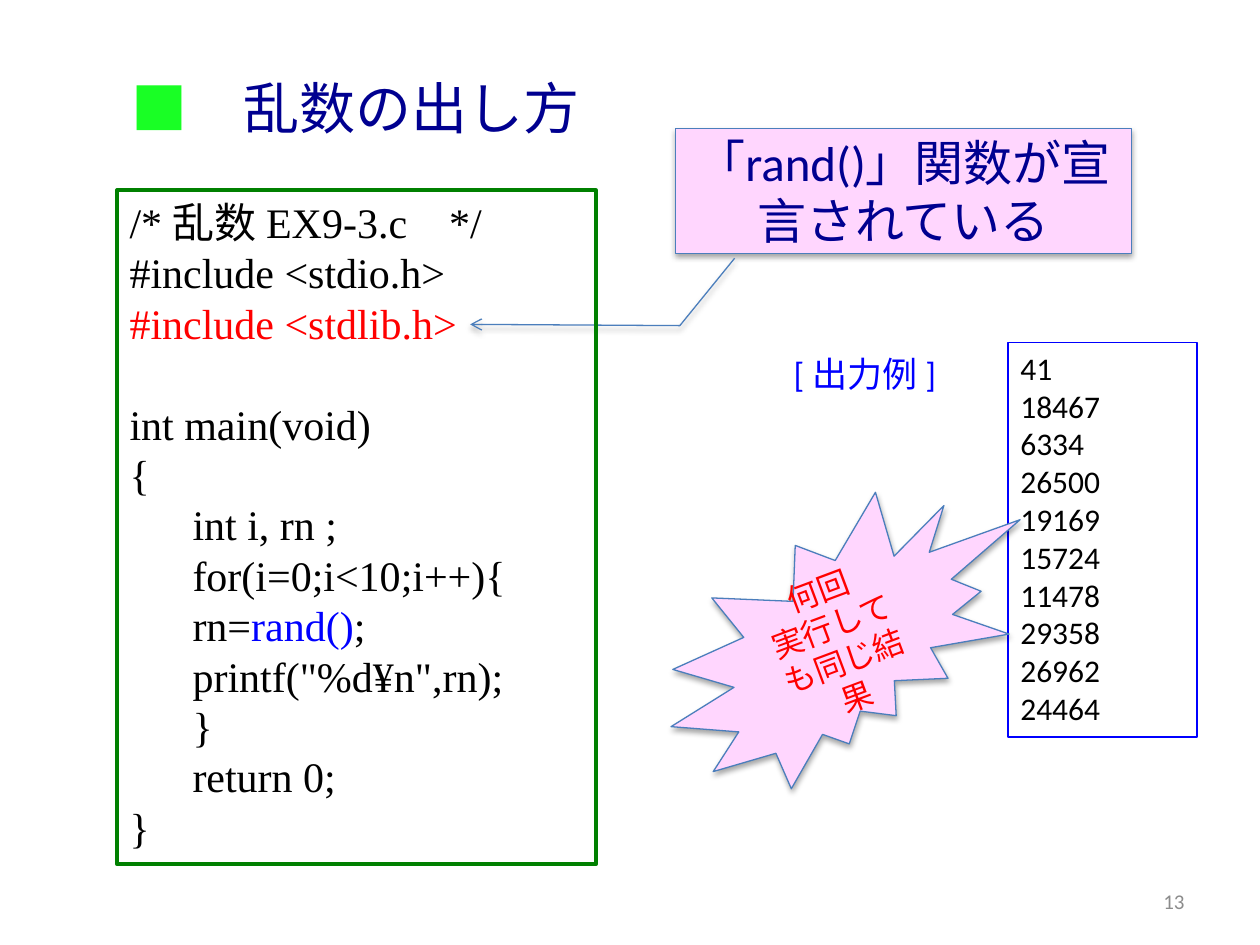
"""Build the slide on generating random numbers in C."""
from dataclasses import dataclass

from lxml import etree
from pptx import Presentation
from pptx.dml.color import RGBColor
from pptx.enum.shapes import MSO_SHAPE as Preset
from pptx.enum.text import MSO_ANCHOR as Anchor, MSO_AUTO_SIZE as AutoSize, PP_ALIGN as Align
from pptx.oxml import parse_xml
from pptx.oxml.ns import nsdecls, qn
from pptx.util import Inches, Pt


@dataclass(frozen=True)
class Theme:
    black: str = "000000"
    red: str = "FF0000"
    blue: str = "0000FF"
    navy: str = "000090"
    green: str = "008000"
    lime: str = "19FF25"
    pink: str = "FFD6FE"
    outline: str = "4B7EBC"
    gray: str = "8C8C8C"
    font: str = "Calibri"
    code_font: str = "Times New Roman"
    title_font: str = "Roboto"
    title_size: int = 32
    callout_size: int = 28
    code_size: int = 24
    label_size: int = 20
    text_size: int = 18
    number_size: int = 12


theme = Theme()


def set_font(font, size, color, name=theme.font):
    font.size = Pt(size)
    font.name = name
    font.color.rgb = RGBColor.from_string(color)


def write_lines(shape, lines, size, color, name=theme.font, align=Align.LEFT, anchor=Anchor.TOP):
    frame = shape.text_frame
    frame.word_wrap = True
    frame.vertical_anchor = anchor
    for index, line in enumerate(lines):
        paragraph = frame.paragraphs[0] if index == 0 else frame.add_paragraph()
        paragraph.alignment = align
        if isinstance(line, str):
            set_font(paragraph.font, size, color, name)
            if line:
                paragraph.add_run().text = line
            continue
        for text, run_color in line:
            run = paragraph.add_run()
            run.text = text
            set_font(run.font, size, run_color, name)


presentation = Presentation()
presentation.slide_width = Inches(10)
presentation.slide_height = Inches(7.5)
slide = presentation.slides.add_slide(presentation.slide_layouts[5])
shapes = slide.shapes

callout = shapes.add_shape(
    Preset.LINE_CALLOUT_2, Inches(5.36), Inches(1.02), Inches(3.62), Inches(0.99))
for index, value in enumerate((1.04, 0.13, 1.58, 0.01, 1.57, -0.45)):
    callout.adjustments[index] = value
write_lines(callout, ["「rand()」関数が宣言されている"], theme.callout_size, theme.navy,
            align=Align.CENTER, anchor=Anchor.MIDDLE)

code_box = shapes.add_shape(
    Preset.RECTANGLE, Inches(0.93), Inches(1.51), Inches(3.8), Inches(5.35))
code_lines = [
    "/* 乱数 EX9-3.c　*/",
    "#include <stdio.h>",
    [("#include <stdlib.h>", theme.red)],
    "",
    "int main(void)",
    "{",
    "\tint i, rn ;",
    "\tfor(i=0;i<10;i++){",
    [("\trn=", theme.black), ("rand()", theme.blue), (";", theme.black)],
    "\tprintf(\"%d¥n\",rn);",
    "\t}",
    "\treturn 0;",
    "}",
]
write_lines(code_box, code_lines, theme.code_size, theme.black, theme.code_font)
for paragraph in code_box.text_frame.paragraphs:
    properties = paragraph._p.get_or_add_pPr()
    tabs = parse_xml(f'<a:tabLst {nsdecls("a")}><a:tab pos="{Inches(0.5)}" algn="l"/></a:tabLst>')
    properties.insert(0, tabs)

output_box = shapes.add_shape(
    Preset.RECTANGLE, Inches(8), Inches(2.72), Inches(1.5), Inches(3.13))
output = "41 18467 6334 26500 19169 15724 11478 29358 26962 24464".split()
write_lines(output_box, output, theme.text_size, theme.black)

for box, color, width in ((code_box, theme.green, 2.25), (output_box, theme.blue, 0.75)):
    box.shadow.inherit = False
    box.fill.background()
    box.line.color.rgb = RGBColor.from_string(color)
    box.line.width = Pt(width)
    box.text_frame.auto_size = AutoSize.SHAPE_TO_FIT_TEXT

output_label = shapes.add_textbox(Inches(6.2), Inches(2.75), Inches(1.36), Inches(0.44))
write_lines(output_label, ["[ 出力例 ]"], theme.label_size, theme.blue)

burst = shapes.add_shape(
    Preset.EXPLOSION2, Inches(5.16), Inches(4.05), Inches(3.17), Inches(1.97))
burst.rotation = 339.5
write_lines(burst, ["何回", "実行しても同じ結果"], theme.text_size, theme.red,
            align=Align.CENTER, anchor=Anchor.MIDDLE)

for note in (callout, burst):
    note.fill.solid()
    note.fill.fore_color.rgb = RGBColor.from_string(theme.pink)
    note.line.color.rgb = RGBColor.from_string(theme.outline)
    note.line.width = Pt(0.75)
    note.shadow.inherit = False
    effects = note._element.spPr.find(qn("a:effectLst"))
    effects.append(parse_xml(
        f'<a:outerShdw {nsdecls("a")} blurRad="{Pt(3.1)}" dist="{Pt(1.8)}" dir="5400000" '
        f'rotWithShape="0"><a:srgbClr val="{theme.black}"><a:alpha val="35000"/></a:srgbClr>'
        '</a:outerShdw>'))
etree.SubElement(callout.line._get_or_add_ln(), qn("a:tailEnd"), type="arrow")

title = shapes.title
title.left, title.top = Inches(0.94), Inches(0.53)
title.width, title.height = Inches(4.2), Inches(0.72)
write_lines(title, [[("■　", theme.lime), ("乱数の出し方", theme.navy)]],
            theme.title_size, theme.navy, theme.title_font)
title.text_frame.auto_size = AutoSize.NONE

page_number = shapes.add_textbox(Inches(7.17), Inches(6.95), Inches(2.33), Inches(0.4))
write_lines(page_number, ["13"], theme.number_size, theme.gray,
            align=Align.RIGHT, anchor=Anchor.MIDDLE)

presentation.save("out.pptx")
